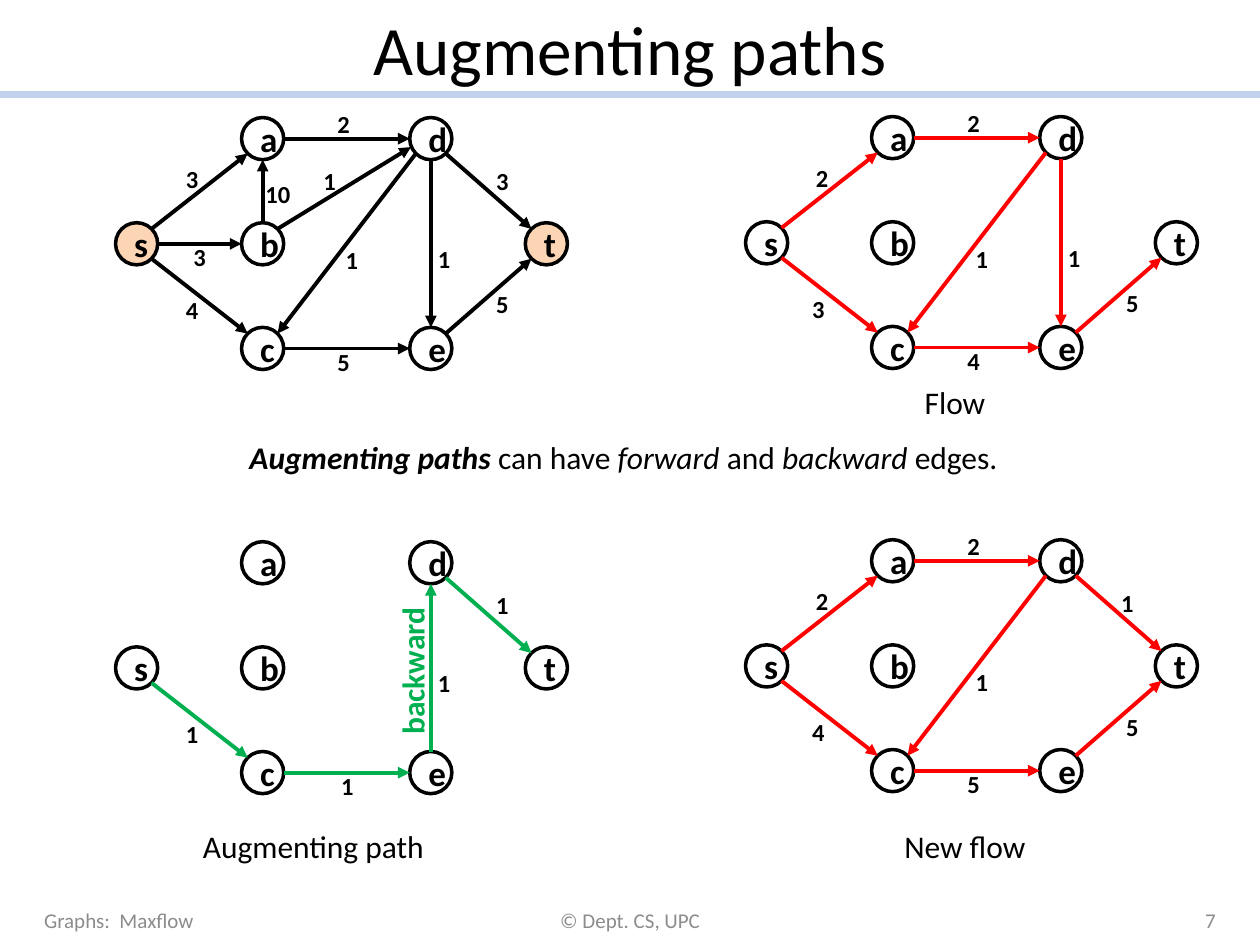
from lxml import etree
from pptx import Presentation
from pptx.dml.color import RGBColor
from pptx.enum.shapes import MSO_CONNECTOR, MSO_SHAPE
from pptx.enum.text import MSO_ANCHOR, MSO_AUTO_SIZE, PP_ALIGN
from pptx.oxml.ns import qn
from pptx.util import Cm, Pt

LEFT, CENTER, RIGHT = PP_ALIGN.LEFT, PP_ALIGN.CENTER, PP_ALIGN.RIGHT
TOP, MIDDLE = MSO_ANCHOR.TOP, MSO_ANCHOR.MIDDLE
FIT, FIXED = MSO_AUTO_SIZE.SHAPE_TO_FIT_TEXT, MSO_AUTO_SIZE.NONE
OVAL, STRAIGHT = MSO_SHAPE.OVAL, MSO_CONNECTOR.STRAIGHT
BLACK, GRAY, RED, GREEN = "000000", "8C8C8C", "FF0000", "00B050"
PEACH, PALE_BLUE = "FCD5B5", "C2D1ED"


def fill_text(sp, runs, size, color=BLACK, align=LEFT, anchor=TOP, fit=True):
    """Write (text, bold, italic) runs; fit means a one-line box that grows."""
    tf = sp.text_frame
    tf.word_wrap = not fit
    tf.auto_size = FIT if fit else FIXED
    tf.vertical_anchor = anchor
    p = tf.paragraphs[0]
    p.alignment = align
    for text, bold, italic in runs:
        r = p.add_run()
        r.text = text
        r.font.name = "Calibri"
        r.font.size = Pt(size)
        r.font.bold = bold
        r.font.italic = italic
        r.font.color.rgb = RGBColor.from_string(color)


def add_line(shapes, start, end, color, width, arrow=True):
    line = shapes.add_connector(STRAIGHT, *map(Cm, start + end))
    line.line.color.rgb = RGBColor.from_string(color)
    line.line.width = Pt(width)
    sp_pr = line._element.spPr
    if arrow:
        etree.SubElement(sp_pr.find(qn("a:ln")), qn("a:tailEnd"), type="triangle")
    etree.SubElement(sp_pr, qn("a:effectLst"))


prs = Presentation()
prs.slide_width, prs.slide_height = Cm(25.4), Cm(19.05)
s = prs.slides.add_slide(prs.slide_layouts[5])

add_line(s.shapes, (0, 1.91), (25.4, 1.91), PALE_BLUE, 4, arrow=False)

title = s.shapes.title
title.left, title.top, title.width, title.height = map(Cm, (1.27, 0, 22.86, 1.91))
fill_text(title, [("Augmenting paths", False, False)], 39.6,
          align=CENTER, anchor=MIDDLE, fit=False)

for x, width, text, align in [
    (0.64, 5.92, "Graphs:  Maxflow", LEFT),
    (8.68, 8.05, "© Dept. CS, UPC", CENTER),
    (18.84, 5.92, "7", RIGHT),
]:
    footer = s.shapes.add_textbox(Cm(x), Cm(18.03), Cm(width), Cm(1.02))
    fill_text(footer, [(text, False, False)], 12, GRAY, align, MIDDLE, fit=False)

sentence = s.shapes.add_textbox(Cm(4.78), Cm(8.71), Cm(15.85), Cm(1.02))
fill_text(sentence, [
    ("Augmenting paths ", True, True),
    ("can have ", False, False),
    ("forward", False, True),
    (" and ", False, False),
    ("backward", False, True),
    (" edges.", False, False),
], 18)

# Node and label corners, in cm from the corner of a graph
SIZE = 0.85
NODES = {
    "a": (2.54, 0), "b": (2.54, 2.12), "c": (2.54, 4.23), "d": (5.93, 0),
    "e": (5.93, 4.23), "s": (0, 2.12), "t": (8.26, 2.12),
}
LABELS = {
    "sa": (1.17, 0.81), "ad": (4.22, -0.29), "sb": (1.32, 2.39),
    "sc": (1.17, 3.45), "ce": (4.22, 4.5), "bd": (3.94, 0.86),
    "ba": (2.77, 1.12), "dt": (7.42, 0.85), "dc": (4.39, 2.45),
    "de": (6.25, 2.42), "ed": (6.25, 2.42), "et": (7.42, 3.34),
}
# Arrow tips, from the node centre, that are not on one of the eight sites
TIPS = {"bd": (-0.4, 0.17)}

# Corner, edge colour, filled nodes, caption (text, left, top, width),
# edges (name, value, sideways nudge of the label)
GRAPHS = [
    ((2.33, 2.37), BLACK, "st", None,
     [("sb", 3, 0), ("ba", 10, 0), ("sa", 3, 0), ("ad", 2, 0), ("dt", 3, 0),
      ("dc", 1, 0), ("bd", 1, 0), ("et", 5, 0), ("ce", 5, 0), ("de", 1, 0),
      ("sc", 4, 0)]),
    ((15.03, 2.35), RED, "", ("Flow", 18.39, 7.59, 1.75),
     [("sa", 2, 0), ("dc", 1, 0), ("et", 5, 0), ("ce", 4, 0), ("ad", 2, 0),
      ("de", 1, 0), ("sc", 3, -0.08)]),
    ((15.03, 10.88), RED, "", ("New flow", 17.98, 16.54, 3),
     [("sa", 2, 0), ("dc", 1, 0), ("et", 5, 0), ("ce", 5, 0), ("ad", 2, 0),
      ("dt", 1, -0.1), ("sc", 4, -0.08)]),
    ((2.33, 10.92), GREEN, "", ("Augmenting path", 3.84, 16.54, 5.03),
     [("dt", 1, 0), ("ce", 1, 0.08), ("ed", 1, 0), ("sc", 1, 0)]),
]

for (left, top), color, filled, caption, edges in GRAPHS:
    shapes = s.shapes.add_group_shape().shapes
    centers = {}
    for name, (x, y) in NODES.items():
        centers[name] = (left + x + SIZE / 2, top + y + SIZE / 2)
        node = shapes.add_shape(OVAL, Cm(left + x), Cm(top + y), Cm(SIZE), Cm(SIZE))
        node.shadow.inherit = False
        if name in filled:
            node.fill.solid()
            node.fill.fore_color.rgb = RGBColor.from_string(PEACH)
        else:
            node.fill.background()
        node.line.color.rgb = RGBColor.from_string(BLACK)
        node.line.width = Pt(2)
        fill_text(node, [(name, True, False)], 20,
                  align=CENTER, anchor=MIDDLE, fit=False)

    for edge, value, nudge in edges:
        (x1, y1), (x2, y2) = centers[edge[0]], centers[edge[1]]
        # Edges join the nearest of the eight sites on each circle
        dx, dy = (x2 > x1) - (x2 < x1), (y2 > y1) - (y2 < y1)
        reach = SIZE / 2 / (dx * dx + dy * dy) ** 0.5
        tip_x, tip_y = TIPS.get(edge, (-dx * reach, -dy * reach))
        add_line(shapes, (x1 + dx * reach, y1 + dy * reach),
                 (x2 + tip_x, y2 + tip_y), color, 2.25)

        x, y = LABELS[edge]
        width = 0.51 + 0.25 * len(str(value))
        label = shapes.add_textbox(Cm(left + x + nudge), Cm(top + y), Cm(width), Cm(0.86))
        fill_text(label, [(str(value), True, False)], 14)

    if caption:
        text, x, y, width = caption
        box = shapes.add_textbox(Cm(x), Cm(y), Cm(width), Cm(1.02))
        fill_text(box, [(text, False, False)], 18)

backward = shapes.add_textbox(Cm(6.76), Cm(13), Cm(3.1), Cm(1.02))
backward.rotation = 270
fill_text(backward, [("backward", True, False)], 18, GREEN)

prs.save("out.pptx")
